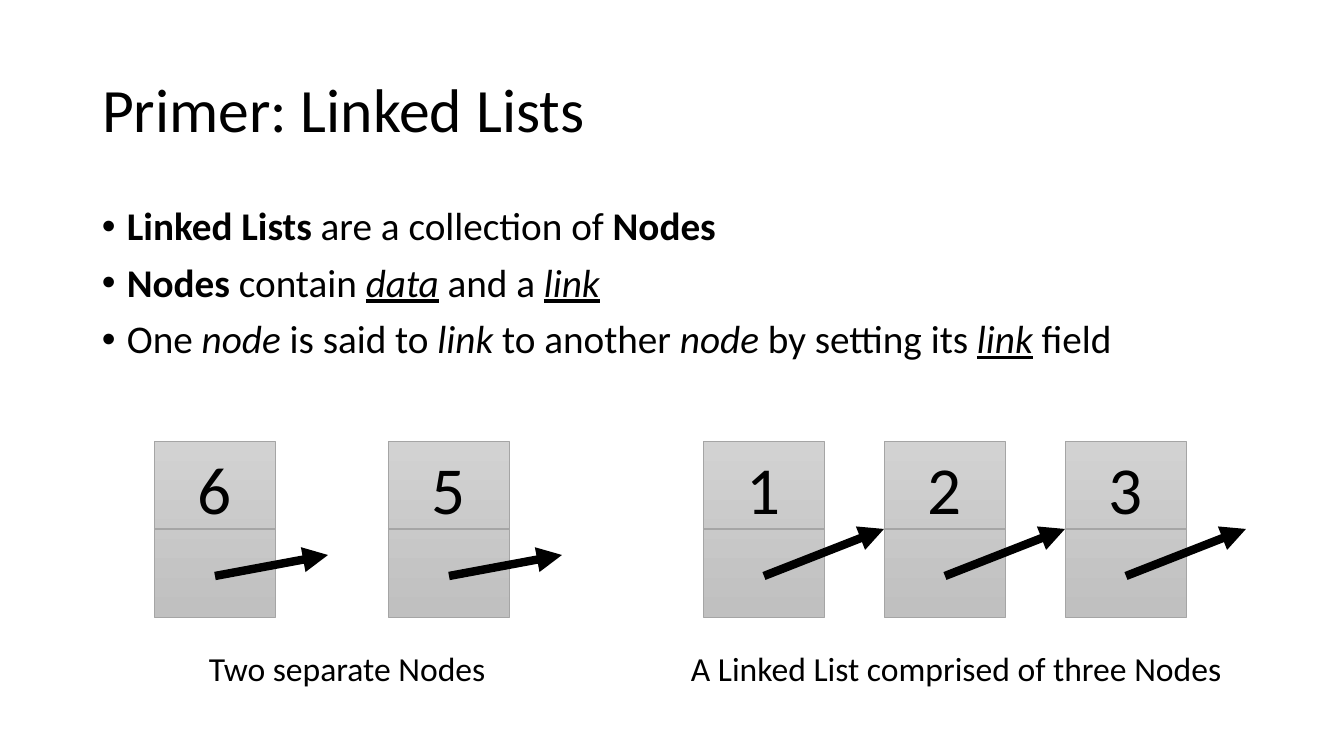
from lxml import etree
from pptx import Presentation
from pptx.dml.color import RGBColor
from pptx.enum.shapes import MSO_CONNECTOR, MSO_SHAPE
from pptx.enum.text import MSO_ANCHOR, MSO_AUTO_SIZE, PP_ALIGN
from pptx.oxml.ns import qn
from pptx.util import Emu, Pt

RECTANGLE = MSO_SHAPE.RECTANGLE
STRAIGHT = MSO_CONNECTOR.STRAIGHT
TOP, MIDDLE = MSO_ANCHOR.TOP, MSO_ANCHOR.MIDDLE
LEFT, CENTER = PP_ALIGN.LEFT, PP_ALIGN.CENTER
NO_AUTOFIT = MSO_AUTO_SIZE.NONE

EMU_PER_PX = 914400 / 100.8
SLIDE_SIZE = (1344, 756)

NODE_TOP, NODE_WIDTH, NODE_HEIGHT = 441, 121, 176
LINK_START = (61, 135)  # offset from the node's top left corner
VALUE_INSET = 6

PLAIN = {}
BOLD = {"bold": True}
ITALIC = {"italic": True}
FIELD = {"italic": True, "underline": True}

BULLETS = [
    [("Linked Lists ", BOLD), ("are a collection of ", PLAIN), ("Nodes", BOLD)],
    [("Nodes", BOLD), (" contain ", PLAIN), ("data", FIELD), (" and a ", PLAIN),
     ("link", FIELD)],
    [("One ", PLAIN), ("node", ITALIC), (" is said to ", PLAIN), ("link", ITALIC),
     (" to another ", PLAIN), ("node", ITALIC), (" by setting its ", PLAIN),
     ("link", FIELD), (" field", PLAIN)],
]

# values, first left edge, pitch, arrow tip offset, caption, caption left and width
CHAINS = [
    ("65", 154, 234, (174, 114), "Two separate Nodes", 199, 299),
    ("123", 703, 181, (181, 88), "A Linked List comprised of three Nodes", 681, 555),
]


def px(length):
    return Emu(round(length * EMU_PER_PX))


def rgb(hex_string):
    return RGBColor.from_string(hex_string)


class SlideBuilder:
    font_name = "Calibri"
    ink = "000000"
    outline = "A5A5A5"
    node_gradient = ("D2D2D2", "C0C0C0")

    def __init__(self, presentation):
        self.slide = presentation.slides.add_slide(presentation.slide_layouts[5])

    def add_text(self, paragraph, text, size, emphasis=PLAIN):
        run = paragraph.add_run()
        run.text = text
        font_format = {"name": self.font_name, "size": Pt(size), **emphasis}
        for attribute, value in font_format.items():
            setattr(run.font, attribute, value)
        run.font.color.rgb = rgb(self.ink)

    def title(self, text, left, top, width, height):
        heading = self.slide.shapes.title
        heading.left, heading.top = px(left), px(top)
        heading.width, heading.height = px(width), px(height)
        frame = heading.text_frame
        frame.auto_size = NO_AUTOFIT
        frame.vertical_anchor = MIDDLE
        paragraph = frame.paragraphs[0]
        paragraph.alignment = LEFT
        paragraph.line_spacing = 0.9
        self.add_text(paragraph, text, 44)

    def text_box(self, left, top, width, height, wrap):
        box = self.slide.shapes.add_textbox(px(left), px(top), px(width), px(height))
        box.text_frame.word_wrap = wrap
        return box.text_frame

    def bullets(self, items, left, top, width, height):
        frame = self.text_box(left, top, width, height, True)
        for index, item in enumerate(items):
            paragraph = frame.add_paragraph() if index else frame.paragraphs[0]
            paragraph.line_spacing = 0.9
            paragraph.space_before = Pt(10)
            properties = paragraph._p.get_or_add_pPr()
            properties.set("marL", str(px(25)))
            properties.set("indent", str(-px(25)))
            etree.SubElement(properties, qn("a:buFont"), typeface="Arial")
            etree.SubElement(properties, qn("a:buChar"), char="•")
            for text, emphasis in item:
                self.add_text(paragraph, text, 28, emphasis)

    def caption(self, text, left, top, width, height):
        frame = self.text_box(left, top, width, height, False)
        self.add_text(frame.paragraphs[0], text, 24)

    def line(self, shapes, start, end, color, weight):
        connector = shapes.add_connector(STRAIGHT, *map(px, start + end))
        connector.line.color.rgb = rgb(color)
        connector.line.width = Pt(weight)
        etree.SubElement(connector._element.spPr, qn("a:effectLst"))
        return connector

    def arrow(self, start, end):
        link = self.line(self.slide.shapes, start, end, self.ink, 6)
        outline = link._element.spPr.find(qn("a:ln"))
        etree.SubElement(outline, qn("a:tailEnd"), type="triangle")

    def node(self, value, left, top):
        """Group a box holding the value with the line above its link field."""
        shapes = self.slide.shapes.add_group_shape().shapes
        box = shapes.add_shape(
            RECTANGLE, px(left), px(top), px(NODE_WIDTH), px(NODE_HEIGHT))
        box.shadow.inherit = False
        box.fill.gradient()
        box.fill.gradient_angle = 270
        for stop, color in zip(box.fill.gradient_stops, self.node_gradient):
            stop.color.rgb = rgb(color)
        box.line.color.rgb = rgb(self.outline)
        box.line.width = Pt(0.5)
        frame = box.text_frame
        frame.vertical_anchor = TOP
        frame.margin_top = px(VALUE_INSET)
        frame.paragraphs[0].alignment = CENTER
        self.add_text(frame.paragraphs[0], value, 48)
        middle = top + NODE_HEIGHT // 2
        self.line(shapes, (left, middle), (left + NODE_WIDTH, middle), self.outline, 1)


def main():
    presentation = Presentation()
    presentation.slide_width, presentation.slide_height = map(px, SLIDE_SIZE)
    builder = SlideBuilder(presentation)
    builder.title("Primer: Linked Lists", 92, 40, 1159, 146)
    builder.bullets(BULLETS, 92, 202, 1159, 480)

    for values, first_left, pitch, tip, caption, caption_left, caption_width in CHAINS:
        lefts = [first_left + pitch * index for index in range(len(values))]
        for value, left in zip(values, lefts):
            builder.node(value, left, NODE_TOP)
        for left in lefts:
            start, end = [(left + x, NODE_TOP + y) for x, y in (LINK_START, tip)]
            builder.arrow(start, end)
        builder.caption(caption, caption_left, 643, caption_width, 50)

    presentation.save("out.pptx")


if __name__ == "__main__":
    main()
